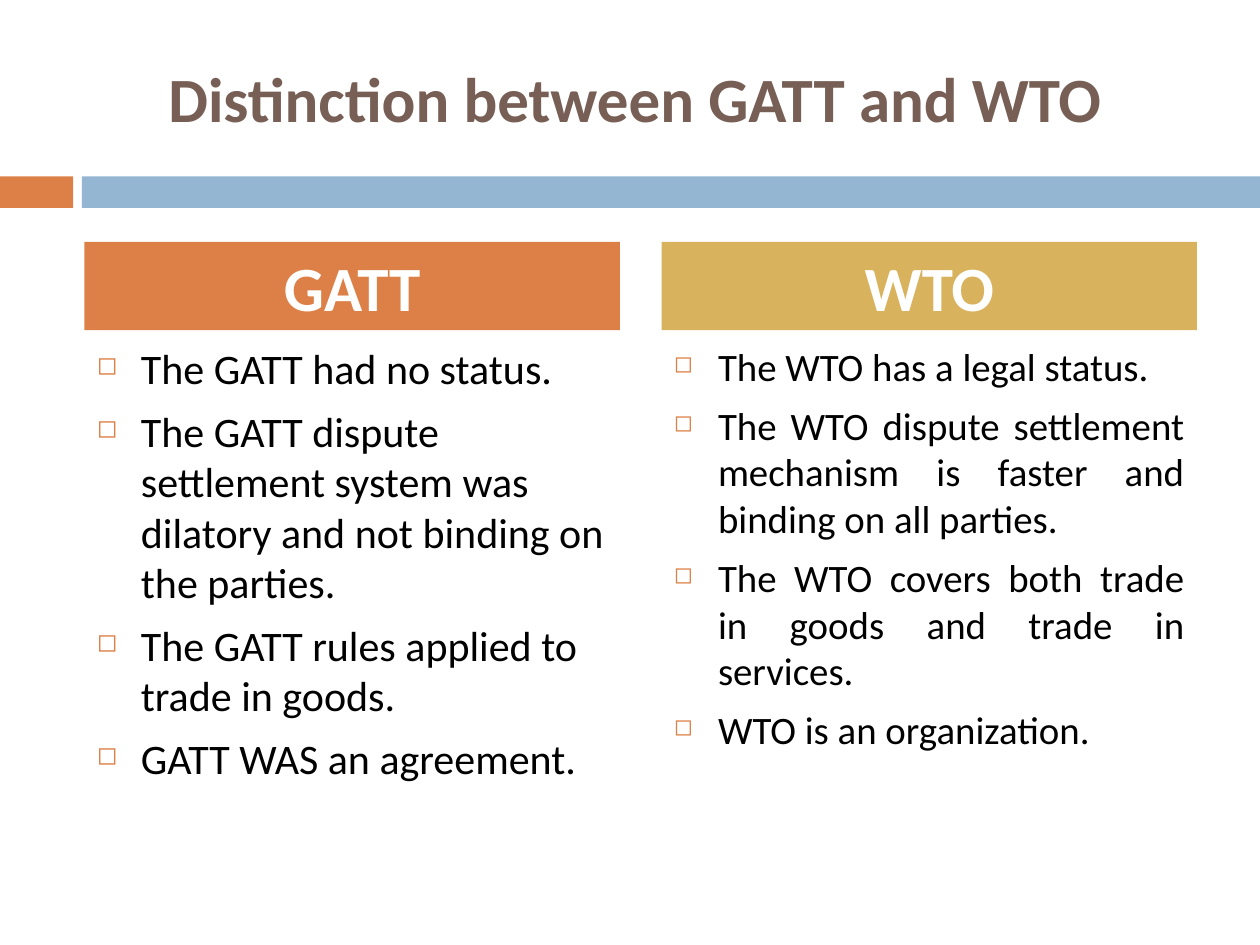
from lxml import etree
from pptx import Presentation
from pptx.dml.color import RGBColor
from pptx.enum import shapes, text
from pptx.oxml.ns import qn
from pptx.util import Inches, Pt

ORANGE = RGBColor(0xDD, 0x80, 0x47)
BLUE = RGBColor(0x94, 0xB6, 0xD2)
GOLD = RGBColor(0xD8, 0xB2, 0x5C)
BROWN = RGBColor(0x77, 0x5F, 0x55)
WHITE = RGBColor(0xFF, 0xFF, 0xFF)
BLACK = RGBColor(0, 0, 0)
LEFT, CENTER, JUSTIFY = (
    text.PP_ALIGN.LEFT, text.PP_ALIGN.CENTER, text.PP_ALIGN.JUSTIFY)

TITLE = "Distinction between GATT and WTO"
BANDS = [(0, 0.58, ORANGE), (0.65, 9.35, BLUE)]
COLUMNS = [
    {"heading": "GATT", "fill": ORANGE, "size": 24, "align": LEFT, "points": [
        "The GATT had no status.",
        "The GATT dispute settlement system was dilatory and not binding on the parties.",
        "The GATT rules applied to trade in goods.",
        "GATT WAS an agreement.",
    ]},
    {"heading": "WTO", "fill": GOLD, "size": 22.2, "align": JUSTIFY, "points": [
        "The WTO has a legal status.",
        "The WTO dispute settlement mechanism is faster and binding on all parties.",
        "The WTO covers both trade in goods and trade in services.",
        "WTO is an organization.",
    ]},
]
COLUMN_LEFT, COLUMN_WIDTH, COLUMN_STEP = 0.67, 4.25, 4.58


def add_bullet(para):
    props = para._p.get_or_add_pPr()
    props.set("marL", str(Inches(0.35)))
    props.set("indent", str(-Inches(0.35)))
    color = etree.SubElement(props, qn("a:buClr"))
    etree.SubElement(color, qn("a:srgbClr"), val=str(ORANGE))
    etree.SubElement(props, qn("a:buSzPct"), val="60000")
    etree.SubElement(props, qn("a:buChar"), char="◻")


def write(box, lines, size, color, align=CENTER, bold=False, before=0,
          bullet=False, anchor=text.MSO_ANCHOR.MIDDLE):
    frame = box.text_frame
    frame.word_wrap = True
    frame.auto_size = text.MSO_AUTO_SIZE.NONE
    frame.vertical_anchor = anchor
    for index, line in enumerate(lines):
        para = frame.add_paragraph() if index else frame.paragraphs[0]
        para.alignment = align
        para.space_before = Pt(before)
        if bullet:
            add_bullet(para)
        span = para.add_run()
        span.text = line
        span.font.name = "Calibri"
        span.font.size = Pt(size)
        span.font.bold = bold
        span.font.color.rgb = color


def add_block(page, left, top, width, height, fill):
    block = page.shapes.add_shape(
        shapes.MSO_SHAPE.RECTANGLE,
        Inches(left), Inches(top), Inches(width), Inches(height))
    block.shadow.inherit = False
    block.fill.solid()
    block.fill.fore_color.rgb = fill
    block.line.fill.background()
    return block


def main():
    deck = Presentation()
    deck.slide_width, deck.slide_height = Inches(10), Inches(7.5)
    page = deck.slides.add_slide(deck.slide_layouts[5])

    title = page.shapes.title
    title.left, title.top = Inches(0.58), Inches(0.3)
    title.width, title.height = Inches(8.92), Inches(0.95)
    write(title, [TITLE], 36, BROWN, bold=True)

    for left, width, fill in BANDS:
        add_block(page, left, 1.4, width, 0.25, fill)

    for index, column in enumerate(COLUMNS):
        left = COLUMN_LEFT + index * COLUMN_STEP
        heading = add_block(page, left, 1.92, COLUMN_WIDTH, 0.7, column["fill"])
        write(heading, [column["heading"]], 36, WHITE, bold=True, before=7)
        body = page.shapes.add_textbox(
            Inches(left), Inches(2.67), Inches(COLUMN_WIDTH), Inches(3.92))
        write(body, column["points"], column["size"], BLACK,
              align=column["align"], before=7, bullet=True,
              anchor=text.MSO_ANCHOR.TOP)

    deck.save("out.pptx")


if __name__ == "__main__":
    main()
